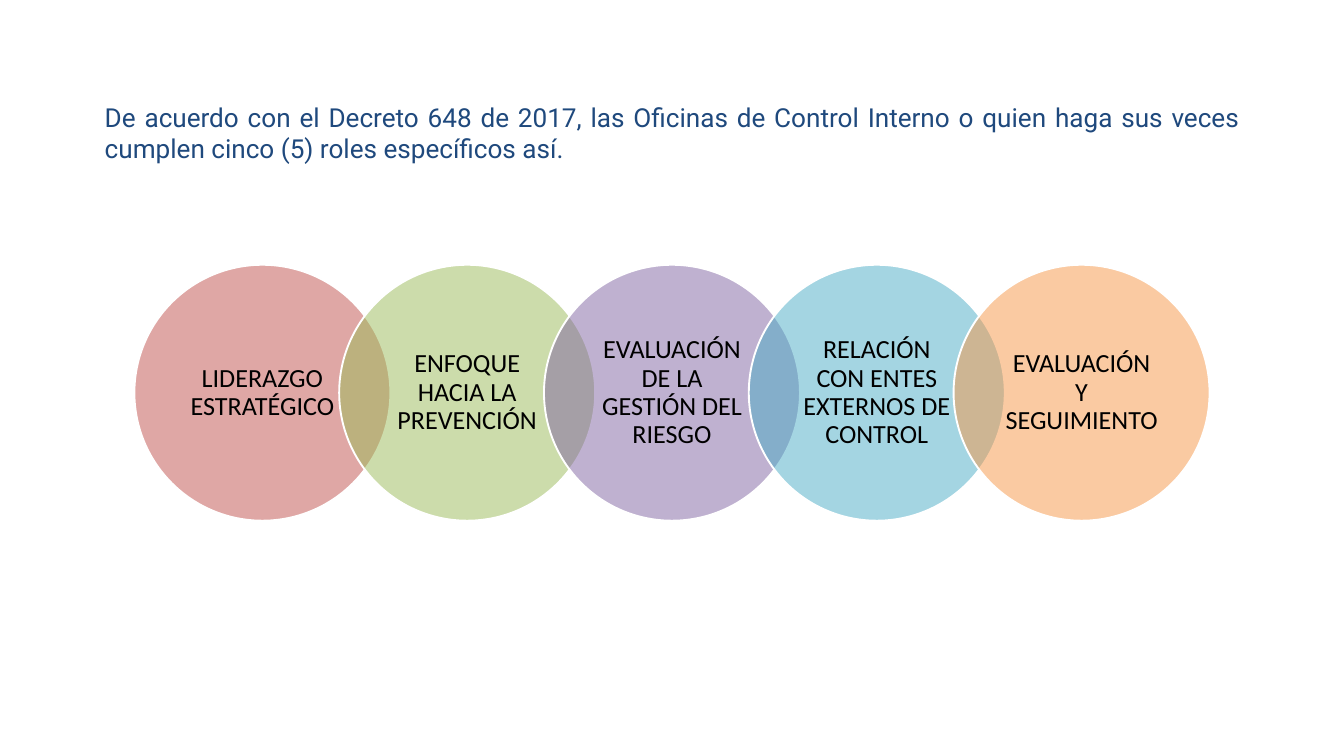
from lxml.etree import SubElement
from pptx import Presentation
from pptx.dml.color import RGBColor
from pptx.enum.shapes import MSO_SHAPE as Shape
from pptx.enum.text import MSO_ANCHOR as Anchor, MSO_AUTO_SIZE as AutoSize, PP_ALIGN as Align
from pptx.oxml.ns import qn
from pptx.util import Cm, Pt

COLORS = {
    "background": "FFFFFF",
    "intro": "1F497D",
    "label": "000000",
    "outline": "FFFFFF",
    "red": "C0504D",
    "green": "9BBB59",
    "purple": "8064A2",
    "aqua": "4BACC6",
    "orange": "F79646",
}
INTRO = (
    "De acuerdo con el Decreto 648 de 2017, las Oficinas de Control Interno "
    "o quien haga sus veces cumplen cinco (5) roles específicos así."
)
ROLES = [
    ("LIDERAZGO ESTRATÉGICO", "red"),
    ("ENFOQUE HACIA LA PREVENCIÓN", "green"),
    ("EVALUACIÓN DE LA GESTIÓN DEL RIESGO", "purple"),
    ("RELACIÓN CON ENTES EXTERNOS DE CONTROL", "aqua"),
    ("EVALUACIÓN Y SEGUIMIENTO", "orange"),
]
STEP_RATIO = 0.8


def rgb(name):
    return RGBColor.from_string(COLORS[name])


def apply_format(target, values):
    for name, value in values.items():
        setattr(target, name, value)


def write_text(frame, text, frame_format, paragraph_format, font_name, color):
    apply_format(frame, {"word_wrap": True, **frame_format})
    paragraph = frame.paragraphs[0]
    apply_format(paragraph, paragraph_format)
    run = paragraph.add_run()
    run.text = text
    apply_format(run.font, {"name": font_name, "size": Pt(28)})
    run.font.color.rgb = rgb(color)


def add_intro(slide, left, top, width, height):
    box = slide.shapes.add_textbox(Cm(left), Cm(top), Cm(width), Cm(height))
    write_text(
        box.text_frame,
        INTRO,
        {"auto_size": AutoSize.SHAPE_TO_FIT_TEXT},
        {"alignment": Align.JUSTIFY},
        "Roboto",
        "intro",
    )


def add_role_circle(group, left, top, diameter, label, color):
    circle = group.shapes.add_shape(
        Shape.OVAL, Cm(left), Cm(top), Cm(diameter), Cm(diameter)
    )
    circle.shadow.inherit = False
    circle.fill.solid()
    circle.fill.fore_color.rgb = rgb(color)
    fill_color = circle.fill._xPr.find(qn("a:solidFill"))[0]
    SubElement(fill_color, qn("a:alpha"), val="50000")
    circle.line.color.rgb = rgb("outline")
    circle.line.width = Pt(2)
    write_text(
        circle.text_frame,
        label,
        {
            "vertical_anchor": Anchor.MIDDLE,
            "margin_left": Cm(0.53),
            "margin_right": Cm(0.53),
            "margin_top": Cm(0.1),
            "margin_bottom": Cm(0.1),
        },
        {"alignment": Align.CENTER, "line_spacing": 0.9},
        "Calibri",
        "label",
    )


def add_role_chain(slide, left, top, width):
    group = slide.shapes.add_group_shape()
    diameter = width / (1 + STEP_RATIO * (len(ROLES) - 1))
    for index, (label, color) in enumerate(ROLES):
        circle_left = left + index * STEP_RATIO * diameter
        add_role_circle(group, circle_left, top, diameter, label, color)


def main():
    presentation = Presentation()
    apply_format(presentation, {"slide_width": Cm(50.8), "slide_height": Cm(28.58)})
    slide = presentation.slides.add_slide(presentation.slide_layouts[6])
    slide.background.fill.solid()
    slide.background.fill.fore_color.rgb = rgb("background")
    add_intro(slide, 3.71, 3.71, 43.38, 2.64)
    add_role_chain(slide, 5.08, 10.01, 40.64)
    presentation.save("out.pptx")


if __name__ == "__main__":
    main()
